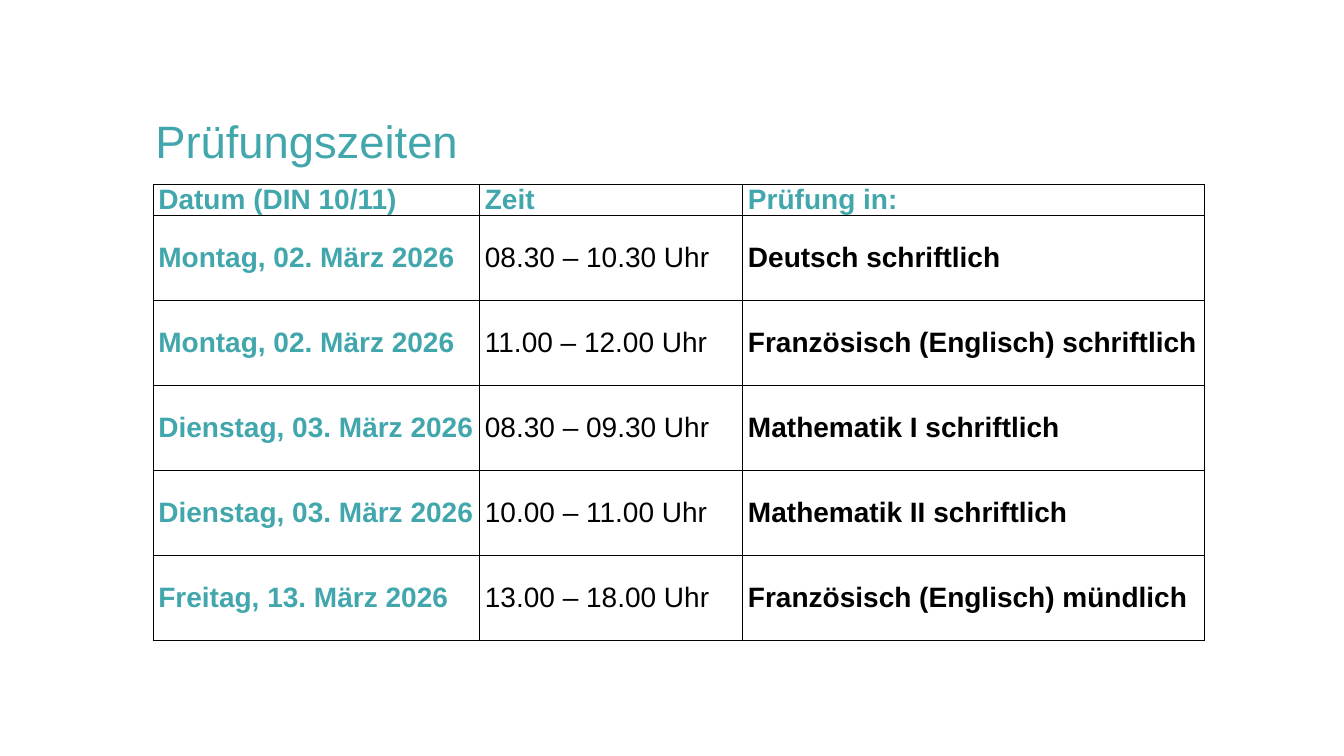
from dataclasses import dataclass
from typing import NamedTuple

from lxml.etree import SubElement
from pptx import Presentation
from pptx.dml.color import RGBColor
from pptx.enum.text import MSO_ANCHOR, MSO_AUTO_SIZE, PP_ALIGN
from pptx.oxml.ns import qn
from pptx.slide import Slide
from pptx.table import _Cell
from pptx.text.text import _Paragraph
from pptx.util import Cm, Pt


@dataclass(frozen=True)
class Theme:
    font: str = "Arial"
    teal: str = "41A7AC"
    black: str = "000000"
    head: float = 32.4
    body: float = 20
    line: float = 1


class Exam(NamedTuple):
    day: str
    time: str
    topic: str


class Style(NamedTuple):
    color: str
    bold: bool


THEME = Theme()
HEADS = Exam("Datum (DIN 10/11)", "Zeit", "Prüfung in:")
EXAMS = [
    Exam("Montag, 02. März 2026", "08.30 – 10.30 Uhr", "Deutsch schriftlich"),
    Exam("Montag, 02. März 2026", "11.00 – 12.00 Uhr", "Französisch (Englisch) schriftlich"),
    Exam("Dienstag, 03. März 2026", "08.30 – 09.30 Uhr", "Mathematik I schriftlich"),
    Exam("Dienstag, 03. März 2026", "10.00 – 11.00 Uhr", "Mathematik II schriftlich"),
    Exam("Freitag, 13. März 2026", "13.00 – 18.00 Uhr", "Französisch (Englisch) mündlich"),
]
HEAD = Style(THEME.teal, True)
COLS = [HEAD, Style(THEME.black, False), Style(THEME.black, True)]
WIDTHS = [8.23, 6.63, 11.63]
HEIGHTS = [0.79] + [2.14] * len(EXAMS)


def add_run(para: _Paragraph, text: str, size: float, style: Style) -> None:
    run = para.add_run()
    run.text = text
    font = run.font
    font.name, font.size, font.bold = THEME.font, Pt(size), style.bold
    font.color.rgb = RGBColor.from_string(style.color)


def add_edges(cell: _Cell) -> None:
    props = cell._tc.get_or_add_tcPr()
    for spot, side in enumerate(("lnL", "lnR", "lnT", "lnB")):
        edge = SubElement(props, qn(f"a:{side}"), w=str(Pt(THEME.line)))
        fill = SubElement(edge, qn("a:solidFill"))
        SubElement(fill, qn("a:srgbClr"), val=THEME.black)
        props.insert(spot, edge)


def fill_cell(cell: _Cell, text: str, style: Style, anchor: MSO_ANCHOR) -> None:
    cell.fill.background()
    add_edges(cell)
    cell.margin_left = cell.margin_right = Cm(0.13)
    cell.margin_top = cell.margin_bottom = 0
    cell.vertical_anchor = anchor
    para = cell.text_frame.paragraphs[0]
    para.space_after = Pt(3)
    add_run(para, text, THEME.body, style)


def add_title(slide: Slide, text: str) -> None:
    title = slide.shapes.title
    title.left, title.top = Cm(3.66), Cm(2.92)
    title.width, title.height = Cm(26.49), Cm(1.4)
    frame = title.text_frame
    frame.auto_size = MSO_AUTO_SIZE.NONE
    frame.word_wrap = True
    frame.vertical_anchor = MSO_ANCHOR.MIDDLE
    para = frame.paragraphs[0]
    para.alignment = PP_ALIGN.LEFT
    para.line_spacing = 0.9
    add_run(para, text, THEME.head, Style(THEME.teal, False))


def add_plan(slide: Slide) -> None:
    table = slide.shapes.add_table(
        len(HEIGHTS), len(WIDTHS), Cm(3.86), Cm(4.64), Cm(sum(WIDTHS)), Cm(sum(HEIGHTS))
    ).table
    table.first_row = table.horz_banding = False
    for col, width in zip(table.columns, WIDTHS):
        col.width = Cm(width)
    for row, height, exam in zip(table.rows, HEIGHTS, [HEADS, *EXAMS]):
        row.height = Cm(height)
        top = exam is HEADS
        anchor = MSO_ANCHOR.TOP if top else MSO_ANCHOR.MIDDLE
        for cell, text, style in zip(row.cells, exam, COLS):
            fill_cell(cell, text, HEAD if top else style, anchor)


def main() -> None:
    deck = Presentation()
    deck.slide_width, deck.slide_height = Cm(33.87), Cm(19.05)
    slide = deck.slides.add_slide(deck.slide_layouts[5])
    # Heading
    add_title(slide, "Prüfungszeiten")
    # Exam schedule
    add_plan(slide)
    deck.save("out.pptx")


if __name__ == "__main__":
    main()
